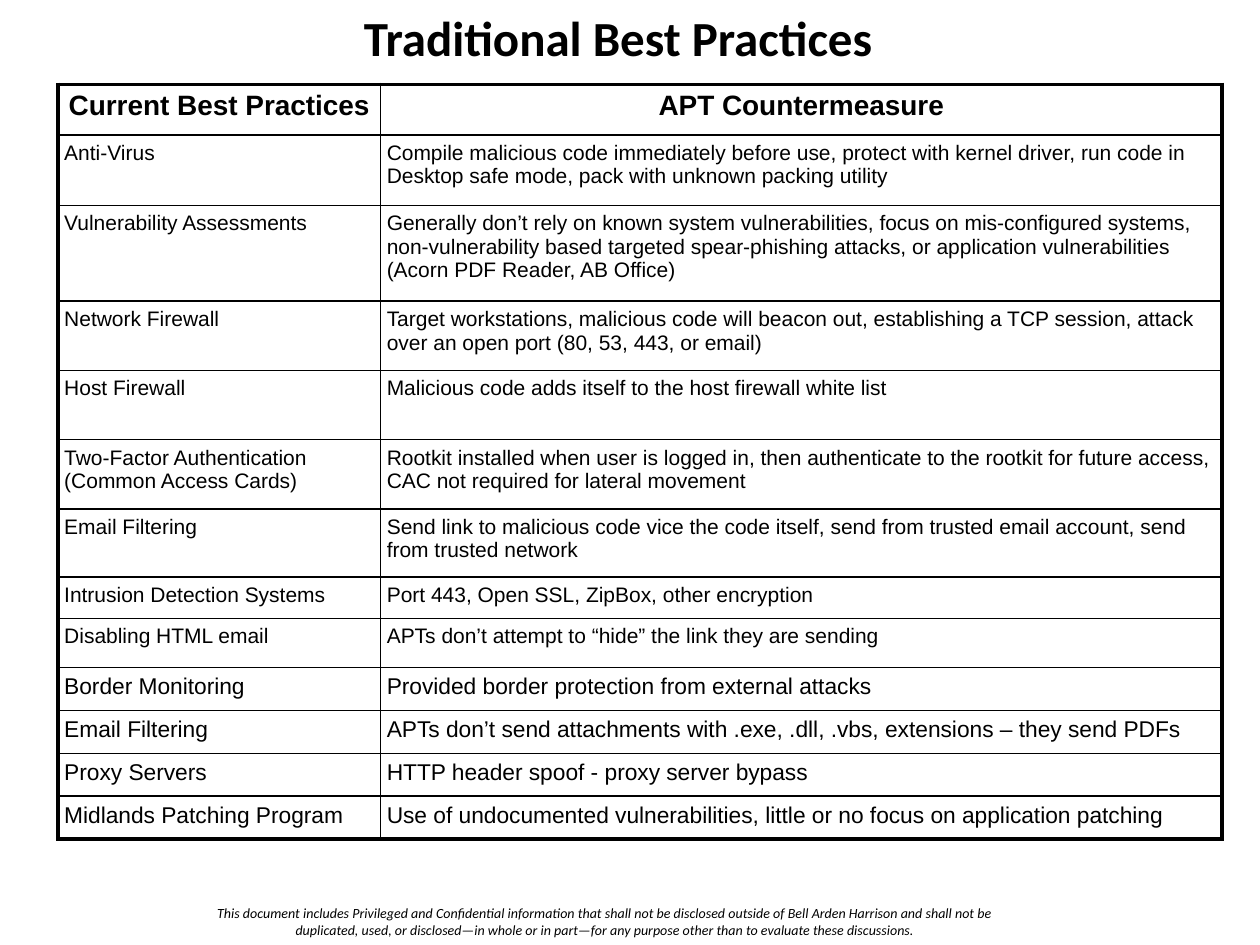
"""Build the slide that sets best practices against APT countermeasures."""
from pptx import Presentation as Deck
from pptx.dml.color import RGBColor as Color
from pptx.enum.text import MSO_ANCHOR as Anchor, MSO_AUTO_SIZE as Fit, PP_ALIGN as Align
from pptx.oxml.ns import qn
from pptx.util import Inches, Pt
from lxml.etree import SubElement as Sub

TITLE = "Traditional Best Practices"
NOTE = (
    "This document includes Privileged and Confidential information that shall not be "
    "disclosed outside of Bell Arden Harrison and shall not be duplicated, used, or "
    "disclosed—in whole or in part—for any purpose other than to evaluate these discussions."
)
HEAD = ("Current Best Practices", "APT Countermeasure", 0.4)
LONG = [
    ("Anti-Virus",
     "Compile malicious code immediately before use, protect with kernel driver, "
     "run code in Desktop safe mode, pack with unknown packing utility", 0.56),
    ("Vulnerability Assessments",
     "Generally don’t rely on known system vulnerabilities, focus on mis-configured systems, "
     "non-vulnerability based targeted spear-phishing attacks, or application "
     "vulnerabilities (Acorn PDF Reader, AB Office)", 0.76),
    ("Network Firewall",
     "Target workstations, malicious code will beacon out, establishing a TCP session, "
     "attack over an open port (80, 53, 443, or email)", 0.55),
    ("Host Firewall", "Malicious code adds itself to the host firewall white list", 0.55),
    ("Two-Factor Authentication (Common Access Cards)",
     "Rootkit installed when user is logged in, then authenticate to the rootkit for "
     "future access, CAC not required for lateral movement", 0.55),
    ("Email Filtering",
     "Send link to malicious code vice the code itself, send from trusted email account, "
     "send from trusted network", 0.54),
    ("Intrusion Detection Systems", "Port 443, Open SSL, ZipBox, other encryption", 0.33),
    ("Disabling HTML email", "APTs don’t attempt to “hide” the link they are sending", 0.39),
]
SHORT = [
    ("Border Monitoring", "Provided border protection from external attacks", 0.34),
    ("Email Filtering",
     "APTs don’t send attachments with .exe, .dll, .vbs, extensions – they send PDFs", 0.34),
    ("Proxy Servers", "HTTP header spoof - proxy server bypass", 0.34),
    ("Midlands Patching Program",
     "Use of undocumented vulnerabilities, little or no focus on application patching", 0.34),
]
COLS = (2.56, 6.68)
THEME = dict(ink="000000", head="Calibri", body="Arial", thin=1, thick=2.25,
             title=28, top=16, long=12, short=13, note=8, pad=0.05)


def write(frame, text, size, face=THEME["body"], bold=False, slant=False, align=Align.LEFT):
    """Put one formatted paragraph in a text frame."""
    frame.word_wrap = True
    para = frame.paragraphs[0]
    para.alignment = align
    para.space_before = Pt(0)
    run = para.add_run()
    run.text = text
    font = run.font
    font.name, font.size, font.bold, font.italic = face, Pt(size), bold, slant
    font.color.rgb = Color.from_string(THEME["ink"])


def edge(cell, side, width):
    """Draw one border of a cell."""
    line = Sub(cell._tc.get_or_add_tcPr(), qn(f"a:ln{side}"), w=str(Pt(width)))
    Sub(Sub(line, qn("a:solidFill")), qn("a:srgbClr"), val=THEME["ink"])


def grid(slide):
    """Add the table of practices and countermeasures."""
    rows = ([(HEAD, THEME["top"])] + [(row, THEME["long"]) for row in LONG]
            + [(row, THEME["short"]) for row in SHORT])
    high = sum(row[2] for row, size in rows)
    table = slide.shapes.add_table(len(rows), len(COLS), Inches(0.46), Inches(0.67),
                                   Inches(sum(COLS)), Inches(high)).table
    table.first_row = table.horz_banding = False
    for col, width in zip(table.columns, COLS):
        col.width = Inches(width)
    for r, (row, size) in enumerate(rows):
        table.rows[r].height = Inches(row[2])
        for c, text in enumerate(row[:2]):
            cell = table.cell(r, c)
            cell.margin_left = cell.margin_right = Inches(THEME["pad"])
            cell.margin_top = cell.margin_bottom = Inches(THEME["pad"])
            outer = dict(L=c == 0, R=c == len(COLS) - 1, T=r == 0, B=r == len(rows) - 1)
            for side, rim in outer.items():
                edge(cell, side, THEME["thick" if rim else "thin"])
            cell.fill.background()
            write(cell.text_frame, text, size, bold=r == 0,
                  align=Align.CENTER if r == 0 else Align.LEFT)


def main():
    """Make and save the deck."""
    deck = Deck()
    deck.slide_width, deck.slide_height = Inches(10), Inches(7.5)
    slide = deck.slides.add_slide(deck.slide_layouts[5])

    title = slide.shapes.title
    title.left, title.top = Inches(0.46), Inches(-0.17)
    title.width, title.height = Inches(9.07), Inches(0.92)
    frame = title.text_frame
    frame.auto_size = Fit.NONE
    frame.vertical_anchor = Anchor.MIDDLE
    frame.margin_right = Inches(0.28)
    write(frame, TITLE, THEME["title"], THEME["head"], bold=True, align=Align.CENTER)

    grid(slide)

    note = slide.shapes.add_textbox(Inches(1.55), Inches(7.18), Inches(6.51), Inches(0.27))
    frame = note.text_frame
    frame.margin_left = frame.margin_right = frame.margin_top = frame.margin_bottom = 0
    write(frame, NOTE, THEME["note"], THEME["head"], slant=True, align=Align.CENTER)
    deck.save("out.pptx")


if __name__ == "__main__":
    main()
